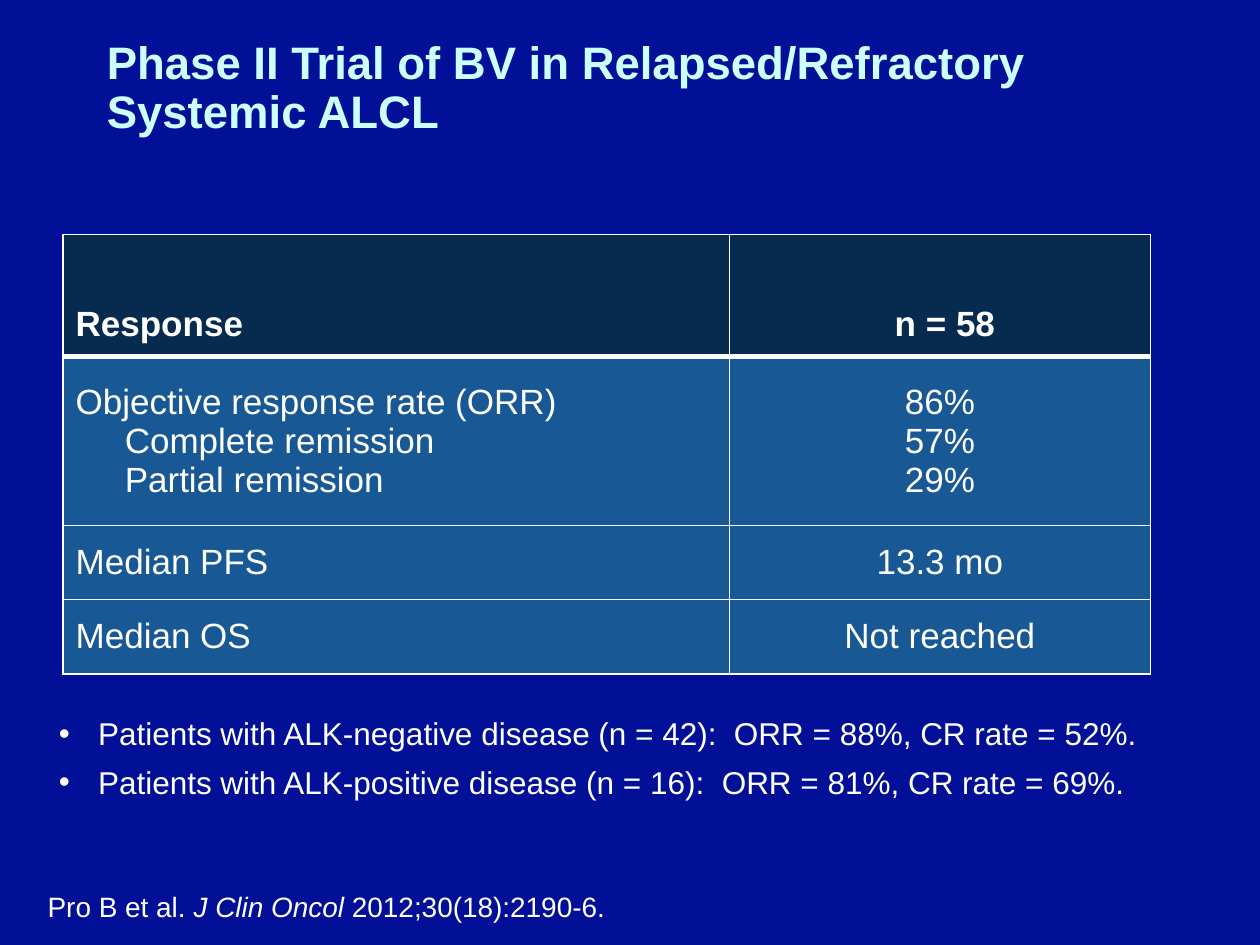
from lxml import etree
from pptx import Presentation
from pptx.dml.color import RGBColor
from pptx.enum.text import MSO_ANCHOR, PP_ALIGN
from pptx.oxml.ns import qn
from pptx.util import Inches, Pt

TOP, MIDDLE, BOTTOM = MSO_ANCHOR.TOP, MSO_ANCHOR.MIDDLE, MSO_ANCHOR.BOTTOM
LEFT, CENTER = PP_ALIGN.LEFT, PP_ALIGN.CENTER

NAVY = RGBColor(0x01, 0x10, 0x97)
PALE_CYAN = RGBColor(0xCC, 0xFF, 0xFF)
WHITE = RGBColor(0xFF, 0xFF, 0xFF)
HEADER_BLUE = RGBColor(0x06, 0x2B, 0x4F)
BODY_BLUE = RGBColor(0x17, 0x58, 0x95)

# Content
TITLE = "Phase II Trial of BV in Relapsed/Refractory Systemic ALCL"
# Each cell is a list of (text, left indent in inches)
ROWS = [
    ([("Response", 0)], [("n = 58", 0.08)]),
    ([("Objective response rate (ORR)", 0), ("Complete remission", 0.39),
      ("Partial remission", 0.39)],
     [("86%", 0), ("57%", 0), ("29%", 0)]),
    ([("Median PFS", 0)], [("13.3 mo", 0)]),
    ([("Median OS", 0)], [("Not reached", 0)]),
]
FINDINGS = [
    "Patients with ALK-negative disease (n = 42):  ORR = 88%, CR rate = 52%.",
    "Patients with ALK-positive disease (n = 16):  ORR = 81%, CR rate = 69%.",
]
CITATION = [("Pro B et al. ", False), ("J Clin Oncol", True),
            (" 2012;30(18):2190-6.", False)]

# Layout in inches
SLIDE_SIZE = (10, 7.5)
TITLE_AREA = (0.75, 0, 8.5, 1.41)
TABLE_ORIGIN = (0.5, 1.86)
COLUMN_WIDTHS = (5.29, 3.34)
ROW_HEIGHTS = (0.97, 1.34, 0.59, 0.59)
FINDINGS_AREA = (0.37, 5.25, 9.04, 1.18)
CITATION_AREA = (0.28, 7.01, 9.72, 0.37)
CELL_INSET = 0.1
BULLET_INDENT = 0.31

# Text formats
TITLE_FONT = {"size": Pt(26), "bold": True}
HEADER_FONT = {"size": Pt(20), "bold": True}
CELL_FONT = {"size": Pt(20), "bold": False}
FINDING_FONT = {"size": Pt(18)}
CITATION_FONT = {"size": Pt(16)}


def add_span(para, text, font_format, color=WHITE):
    span = para.add_run()
    span.text = text
    for name, value in {"name": "Arial", **font_format}.items():
        setattr(span.font, name, value)
    span.font.color.rgb = color


def add_box(page, area, anchor=TOP):
    frame = page.shapes.add_textbox(*map(Inches, area)).text_frame
    frame.word_wrap = True
    frame.vertical_anchor = anchor
    return frame


def next_para(frame, index):
    return frame.paragraphs[0] if index == 0 else frame.add_paragraph()


def set_indent(para, left, first=0):
    properties = para._p.get_or_add_pPr()
    properties.set("marL", str(Inches(left)))
    properties.set("indent", str(Inches(first)))
    return properties


def set_border(cell, side, width):
    line = etree.SubElement(cell._tc.get_or_add_tcPr(), qn("a:ln" + side),
                            w=str(Pt(width)))
    fill = etree.SubElement(line, qn("a:solidFill"))
    etree.SubElement(fill, qn("a:srgbClr"), val=str(WHITE))


def fill_cell(cell, lines, row, column):
    header = row == 0
    cell.vertical_anchor = BOTTOM if header else MIDDLE
    for side in ("left", "right", "top", "bottom"):
        setattr(cell, "margin_" + side, Inches(CELL_INSET))
    # The rule below the header is the only heavy border
    widths = {"L": 1, "R": 1, "T": 3 if row == 1 else 1, "B": 3 if header else 1}
    for side, width in widths.items():
        set_border(cell, side, width)
    cell.fill.solid()
    cell.fill.fore_color.rgb = HEADER_BLUE if header else BODY_BLUE
    for index, (text, indent) in enumerate(lines):
        para = next_para(cell.text_frame, index)
        para.alignment = CENTER if column else LEFT
        set_indent(para, indent)
        add_span(para, text, HEADER_FONT if header else CELL_FONT)


def add_response_table(page):
    size = (sum(COLUMN_WIDTHS), sum(ROW_HEIGHTS))
    table = page.shapes.add_table(len(ROWS), len(COLUMN_WIDTHS),
                                  *map(Inches, TABLE_ORIGIN + size)).table
    for column, width in zip(table.columns, COLUMN_WIDTHS):
        column.width = Inches(width)
    for row, height in zip(table.rows, ROW_HEIGHTS):
        row.height = Inches(height)
    for row, cells in enumerate(ROWS):
        for column, lines in enumerate(cells):
            fill_cell(table.cell(row, column), lines, row, column)


def add_findings(page):
    frame = add_box(page, FINDINGS_AREA)
    frame.margin_top = Inches(0.42)
    for index, text in enumerate(FINDINGS):
        para = next_para(frame, index)
        para.space_after = Pt(6)
        properties = set_indent(para, BULLET_INDENT, -BULLET_INDENT)
        etree.SubElement(properties, qn("a:buFont"), typeface="Arial")
        etree.SubElement(properties, qn("a:buChar"), char="•")
        add_span(para, text, FINDING_FONT)


def main():
    deck = Presentation()
    deck.slide_width, deck.slide_height = map(Inches, SLIDE_SIZE)
    page = deck.slides.add_slide(deck.slide_layouts[6])
    page.background.fill.solid()
    page.background.fill.fore_color.rgb = NAVY

    # Citation
    citation = add_box(page, CITATION_AREA).paragraphs[0]
    for text, italic in CITATION:
        add_span(citation, text, {**CITATION_FONT, "italic": italic})

    # Title
    title = add_box(page, TITLE_AREA, MIDDLE).paragraphs[0]
    title.line_spacing = 0.9
    add_span(title, TITLE, TITLE_FONT, PALE_CYAN)

    # Results
    add_response_table(page)
    add_findings(page)
    deck.save("out.pptx")


if __name__ == "__main__":
    main()
